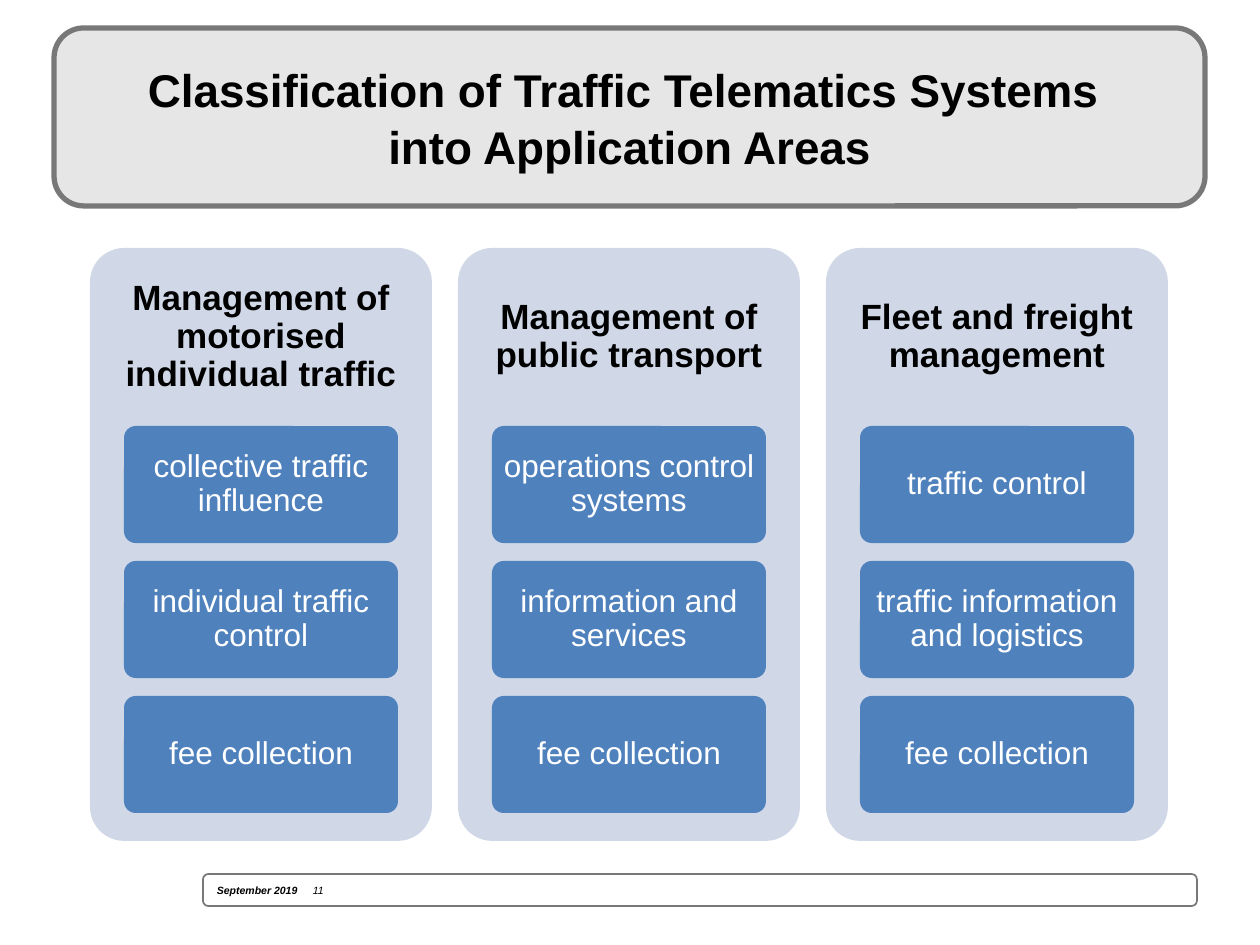
"""Build the slide that sorts traffic telematics systems into application areas."""
from pptx import Presentation
from pptx.dml.color import RGBColor
from pptx.enum.shapes import MSO_SHAPE
from pptx.enum.text import MSO_ANCHOR, MSO_AUTO_SIZE, PP_ALIGN
from pptx.oxml import parse_xml
from pptx.oxml.ns import nsdecls
from pptx.util import Emu, Pt

SCALE = 914400 / 126
COLORS = {"white": "FFFFFF", "black": "000000", "frame": "787878",
          "title": "E7E6E6", "card": "D0D8E8", "item": "4F81BD"}
AREAS = {
    "Management of motorised individual traffic":
        ["collective traffic influence", "individual traffic control", "fee collection"],
    "Management of public transport":
        ["operations control systems", "information and services", "fee collection"],
    "Fleet and freight management":
        ["traffic control", "traffic information and logistics", "fee collection"],
}
TITLE = {"size": Pt(26.2), "bold": True}
HEADING = {"size": Pt(20), "bold": True}
ITEM = {"size": Pt(18), "bold": False}


def add_panel(left, top, width, height, fill, line_width=0):
    place = [Emu(round(value * SCALE)) for value in (left, top, width, height)]
    panel = page.shapes.add_shape(MSO_SHAPE.ROUNDED_RECTANGLE, *place)
    panel.shadow.inherit = False
    panel.fill.solid()
    panel.fill.fore_color.rgb = RGBColor.from_string(COLORS[fill])
    if line_width:
        panel.line.color.rgb = RGBColor.from_string(COLORS["frame"])
        panel.line.width = Pt(line_width)
    else:
        panel.line.fill.background()
        panel.adjustments[0] = 0.1
    return panel


def write_text(box, text, style, color, margin, spacing):
    frame = box.text_frame
    frame.word_wrap = True
    frame.auto_size = MSO_AUTO_SIZE.NONE
    frame.vertical_anchor = MSO_ANCHOR.MIDDLE
    for side in ("left", "right", "top", "bottom"):
        setattr(frame, f"margin_{side}", Emu(round(margin * SCALE)))
    frame.text = text
    paragraph = frame.paragraphs[0]
    paragraph.alignment = PP_ALIGN.CENTER
    paragraph.line_spacing = spacing
    for span in paragraph.runs:
        span.font.name = "Arial"
        span.font.color.rgb = RGBColor.from_string(COLORS[color])
        for name, value in style.items():
            setattr(span.font, name, value)


deck = Presentation()
deck.slide_width = Emu(round(1260 * SCALE))
deck.slide_height = Emu(round(945 * SCALE))
page = deck.slides.add_slide(deck.slide_layouts[5])

footer = add_panel(203, 874, 994, 32, "white", 1)
footer.text_frame.vertical_anchor = MSO_ANCHOR.MIDDLE
paragraph = footer.text_frame.paragraphs[0]
paragraph.alignment = PP_ALIGN.LEFT
tab_position = round(96 * SCALE)
paragraph._p.get_or_add_pPr().append(parse_xml(
    f'<a:tabLst {nsdecls("a")}><a:tab pos="{tab_position}" algn="l"/></a:tabLst>'))
for text, bold in (("September 2019\t", True), ("11", False)):
    span = paragraph.add_run()
    span.text = text
    span.font.color.rgb = RGBColor.from_string(COLORS["black"])
    style = {"name": "Arial", "size": Pt(6), "bold": bold, "italic": True}
    for name, value in style.items():
        setattr(span.font, name, value)

title_frame = add_panel(54, 28, 1151, 178, "title", 3)
title = page.shapes.title
title._element.addprevious(title_frame._element)
bounds = {"left": 74, "top": 38, "width": 1111, "height": 158}
for name, value in bounds.items():
    setattr(title, name, Emu(round(value * SCALE)))
write_text(title, "Classification of Traffic Telematics Systems \vinto Application Areas",
           TITLE, "black", 6, 1.04)

for column, (heading, items) in enumerate(AREAS.items()):
    left = 90 + 368 * column
    add_panel(left, 248, 342, 593, "card")
    place = [Emu(round(value * SCALE)) for value in (left, 248, 342, 178)]
    write_text(page.shapes.add_textbox(*place), heading, HEADING, "black", 10, 0.9)
    for row, item in enumerate(items):
        box = add_panel(left + 34, 426 + 135 * row, 274, 117, "item")
        write_text(box, item, ITEM, "white", 5, 0.9)

deck.save("out.pptx")
